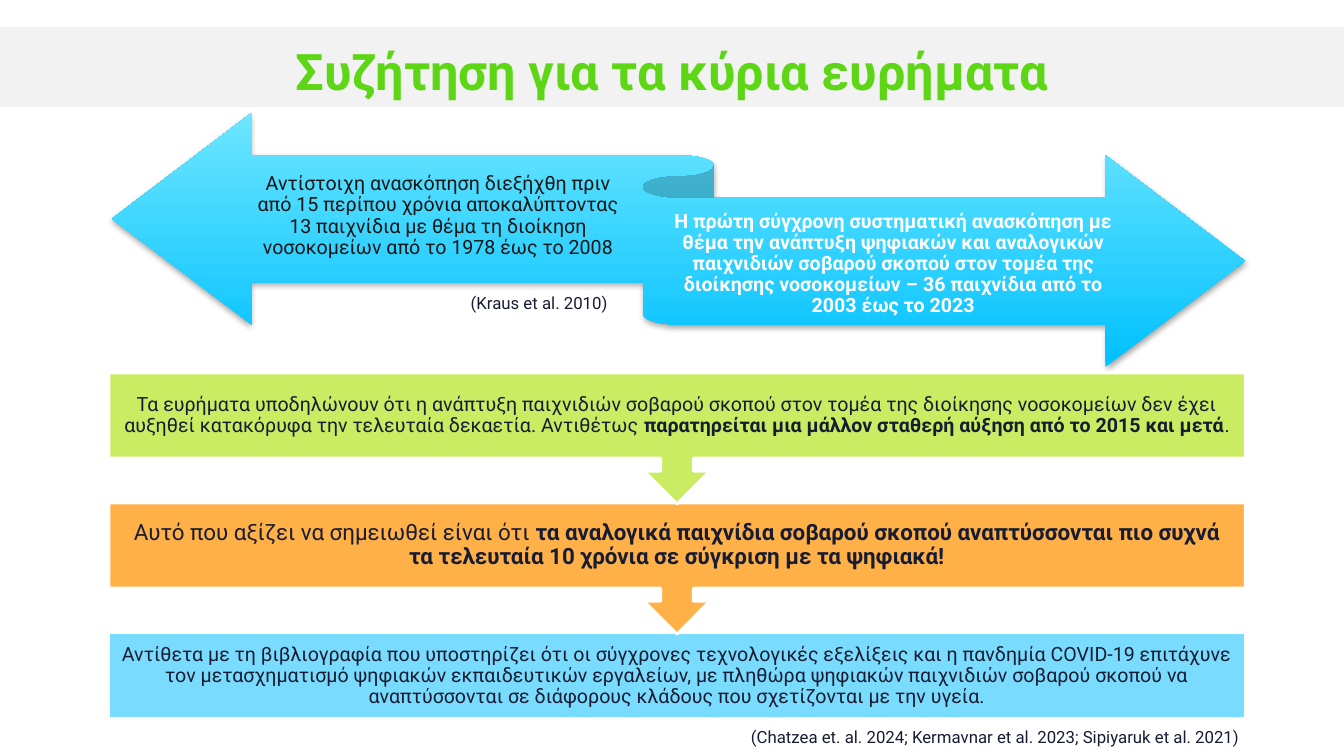
from lxml import etree
from pptx import Presentation
from pptx.dml.color import RGBColor
from pptx.enum import shapes, text
from pptx.oxml.ns import qn
from pptx.util import Inches, Pt

FONT = "Roboto"
C = {"band": "F2F2F2", "title": "5DD616", "ink": "181C32", "dark": "171616",
     "white": "FFFFFF", "deep": "00C1FF", "light": "6EE6FF",
     "green": "C9EC62", "orange": "FFB148", "blue": "79DCFE"}

# Content: text is a list of (wording, bold) runs
TITLE = [("Συζήτηση για τα κύρια ευρήματα", True)]
EARLIER = [("Αντίστοιχη ανασκόπηση διεξήχθη πριν από 15 περίπου χρόνια αποκαλύπτοντας "
            "13 παιχνίδια με θέμα τη διοίκηση νοσοκομείων από το 1978 έως το 2008", False)]
CURRENT = [("Η πρώτη σύγχρονη συστηματική ανασκόπηση με θέμα την ανάπτυξη ψηφιακών και "
            "αναλογικών παιχνιδιών σοβαρού σκοπού στον τομέα της διοίκησης νοσοκομείων "
            "– 36 παιχνίδια από το 2003 έως το 2023", True)]
STEPS = [  # fill, size, runs
    ("green", 14, [
        ("Τα ευρήματα υποδηλώνουν ότι η ανάπτυξη παιχνιδιών σοβαρού σκοπού στον τομέα της "
         "διοίκησης νοσοκομείων δεν έχει αυξηθεί κατακόρυφα την τελευταία δεκαετία. "
         "Αντιθέτως ", False),
        ("παρατηρείται μια μάλλον σταθερή αύξηση από το 2015 και μετά", True),
        (".", False)]),
    ("orange", 16, [
        ("Αυτό που αξίζει να σημειωθεί είναι ότι ", False),
        ("τα αναλογικά παιχνίδια σοβαρού σκοπού αναπτύσσονται πιο συχνά "
         "τα τελευταία 10 χρόνια σε σύγκριση με τα ψηφιακά!", True)]),
    ("blue", 14, [
        ("Αντίθετα με τη βιβλιογραφία που υποστηρίζει ότι οι σύγχρονες τεχνολογικές "
         "εξελίξεις και η πανδημία COVID-19 επιτάχυνε τον μετασχηματισμό ψηφιακών "
         "εκπαιδευτικών εργαλείων, με πληθώρα ψηφιακών παιχνιδιών σοβαρού σκοπού να "
         "αναπτύσσονται σε διάφορους κλάδους που σχετίζονται με την υγεία.", False)]),
]
CITATIONS = [  # left, top, width, wording
    (4.57, 2.86, 1.69, "(Kraus et al. 2010)"),
    (7.35, 7.16, 5.9, "(Chatzea et. al. 2024; Kermavnar et al. 2023; Sipiyaruk et al. 2021)"),
]

# Layout of the step chain
STEP_X, STEP_Y, STEP_W = 1.08, 3.7, 11.27
STEP_PITCH, CALLOUT_H, BOX_H = 1.29, 1.3, 0.85


def rgb(name):
    return RGBColor.from_string(C[name])


def put_text(sp, runs, size, color, inset, spacing=0.9, align="CENTER", anchor="MIDDLE"):
    tf = sp.text_frame
    tf.word_wrap = True
    tf.vertical_anchor = getattr(text.MSO_ANCHOR, anchor)
    tf.margin_left = tf.margin_right = Inches(inset[0])
    tf.margin_top, tf.margin_bottom = Inches(inset[1]), Inches(inset[2])
    p = tf.paragraphs[0]
    p.alignment = getattr(text.PP_ALIGN, align)
    p.line_spacing = spacing
    p.font.name, p.font.size = FONT, Pt(size)
    p.font.color.rgb = rgb(color)
    for wording, bold in runs:
        r = p.add_run()
        r.text = wording
        r.font.name, r.font.size, r.font.bold = FONT, Pt(size), bold
        r.font.color.rgb = rgb(color)


def add_shape(s, kind, box, fill=None, line=None):
    sp = s.shapes.add_shape(kind, *map(Inches, box))
    sp.shadow.inherit = False
    if fill:
        sp.fill.solid()
        sp.fill.fore_color.rgb = rgb(fill)
    if line:
        sp.line.color.rgb = rgb(line)
        sp.line.width = Pt(2)
    else:
        sp.line.fill.background()
    return sp


def add_label(s, box, *args, **kwargs):
    put_text(s.shapes.add_textbox(*map(Inches, box)), *args, **kwargs)


def add_ribbon(s):
    sp = add_shape(s, shapes.MSO_SHAPE.LEFT_RIGHT_RIBBON, (1.11, 1.12, 11.24, 2.52))
    for i, value in enumerate((0.5, 0.55, 0.16667)):
        sp.adjustments[i] = value
    sp.fill.gradient()
    sp.fill.gradient_angle = 90
    for stop, name, pos in zip(sp.fill.gradient_stops, ("deep", "light"), (0, 1)):
        stop.color.rgb = rgb(name)
        stop.position = pos
    # Soft shadow below
    effects = sp._element.spPr.find(qn("a:effectLst"))
    shadow = etree.SubElement(effects, qn("a:outerShdw"), blurRad=str(Pt(3.1)),
                              dist=str(Pt(1.8)), dir="5400000", rotWithShape="0")
    color = etree.SubElement(shadow, qn("a:srgbClr"), val="000000")
    etree.SubElement(color, qn("a:alpha"), val="35000")


def main():
    prs = Presentation()
    prs.slide_width, prs.slide_height = Inches(13.33), Inches(7.5)
    s = prs.slides.add_slide(prs.slide_layouts[6])

    # Title band
    band = add_shape(s, shapes.MSO_SHAPE.RECTANGLE, (0, 0.27, 13.33, 0.79), "band")
    put_text(band, TITLE, 36, "title", (0.1, 0.05, 0.05), spacing=1.1)

    # Two-way ribbon with its two statements
    add_ribbon(s)
    add_label(s, (2.49, 1.67, 3.71, 0.96), EARLIER, 14, "dark", (0, 0.05, 0.06))
    add_label(s, (6.67, 2.12, 4.38, 1.01), CURRENT, 14, "white", (0, 0.05, 0.06))

    # Step chain, last step at the back
    for i, (fill, size, runs) in reversed(list(enumerate(STEPS))):
        last = i == len(STEPS) - 1
        kind = shapes.MSO_SHAPE.RECTANGLE if last else shapes.MSO_SHAPE.DOWN_ARROW_CALLOUT
        box = (STEP_X, STEP_Y + i * STEP_PITCH, STEP_W, BOX_H if last else CALLOUT_H)
        sp = add_shape(s, kind, box, fill, "white")
        if not last:
            for k, value in enumerate((0.25, 0.25, 0.25, 0.65)):
                sp.adjustments[k] = value
        put_text(sp, runs, size, "ink", (0.11, 0.11, 0.11))

    # Citations
    for left, top, width, wording in CITATIONS:
        add_label(s, (left, top, width, 0.3), [(wording, False)], 12, "ink",
                  (0.1, 0.05, 0.05), spacing=1.0, align="LEFT", anchor="TOP")

    prs.save("out.pptx")


if __name__ == "__main__":
    main()
